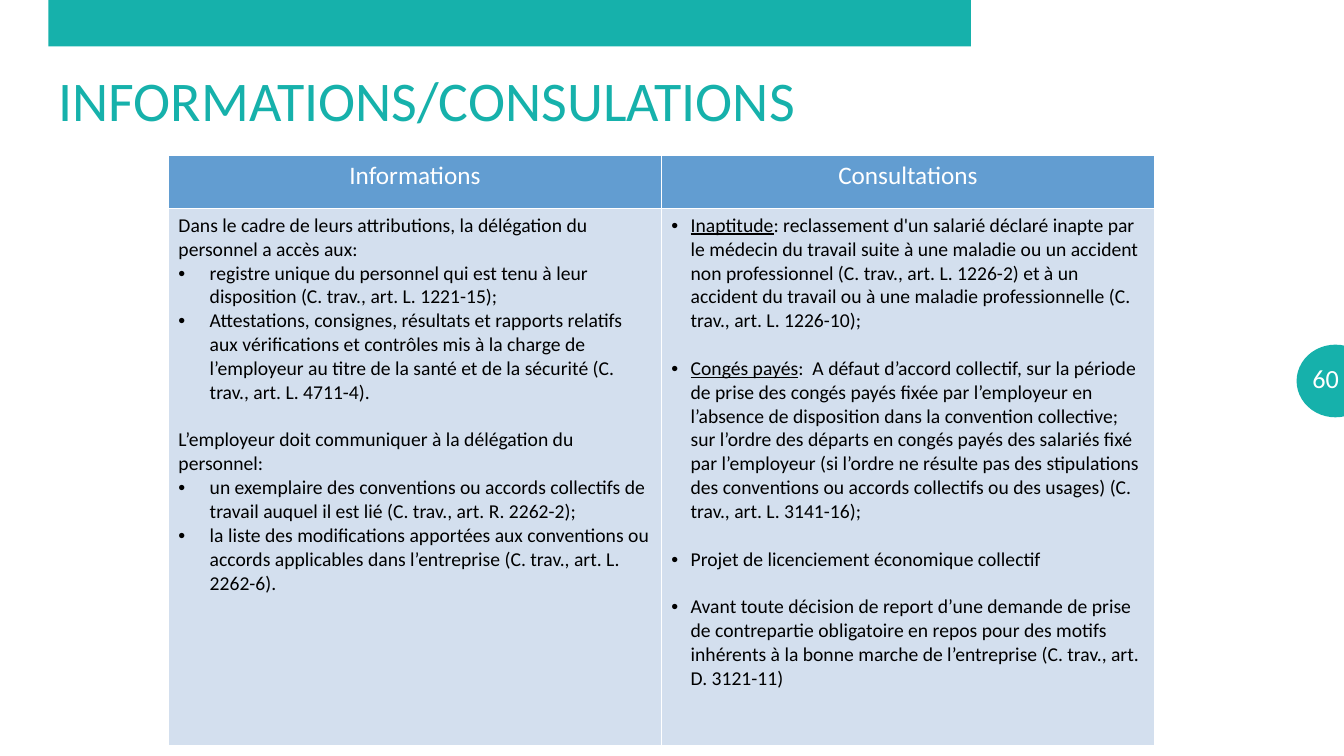
from pptx import Presentation
from pptx.dml.color import RGBColor
from pptx.enum.shapes import MSO_SHAPE
from pptx.enum.text import MSO_ANCHOR, PP_ALIGN
from pptx.oxml.ns import qn
from pptx.util import Inches, Pt
from lxml.etree import SubElement

TEAL = RGBColor(0x16, 0xB1, 0xAB)
WHITE = RGBColor(0xFF, 0xFF, 0xFF)
BLACK = RGBColor(0, 0, 0)
HEADER_BLUE = RGBColor(0x62, 0x9D, 0xD1)
BODY_BLUE = RGBColor(0xD3, 0xDF, 0xEE)
FONT = "Calibri"
LINE_GAP = 17

# Each entry: underlined lead, text, bulleted, space before in points
INFORMATIONS = [
    ("", "Dans le cadre de leurs attributions, la délégation du personnel a accès aux:", False, 0),
    ("", "registre unique du personnel qui est tenu à leur disposition "
         "(C. trav., art. L. 1221-15);", True, 0),
    ("", "Attestations, consignes, résultats et rapports relatifs aux vérifications et "
         "contrôles mis à la charge de l’employeur au titre de la santé et de la sécurité "
         "(C. trav., art. L. 4711-4).", True, 0),
    ("", "L’employeur doit communiquer à la délégation du personnel:", False, LINE_GAP),
    ("", "un exemplaire des conventions ou accords collectifs de travail auquel il est lié "
         "(C. trav., art. R. 2262-2);", True, 0),
    ("", "la liste des modifications apportées aux conventions ou accords applicables dans "
         "l’entreprise (C. trav., art. L. 2262-6).", True, 0),
]
CONSULTATIONS = [
    ("Inaptitude", ": reclassement d'un salarié déclaré inapte par le médecin du travail suite "
     "à une maladie ou un accident non professionnel (C. trav., art. L. 1226-2) et à un accident "
     "du travail ou à une maladie professionnelle (C. trav., art. L. 1226-10);", True, 0),
    ("Congés payés", ":  A défaut d’accord collectif, sur la période de prise des congés payés "
     "fixée par l’employeur en l’absence de disposition dans la convention collective; sur "
     "l’ordre des départs en congés payés des salariés fixé par l’employeur (si l’ordre ne "
     "résulte pas des stipulations des conventions ou accords collectifs ou des usages) "
     "(C. trav., art. L. 3141-16);", True, LINE_GAP),
    ("", "Projet de licenciement économique collectif", True, LINE_GAP),
    ("", "Avant toute décision de report d’une demande de prise de contrepartie obligatoire en "
     "repos pour des motifs inhérents à la bonne marche de l’entreprise "
     "(C. trav., art. D. 3121-11)", True, LINE_GAP),
]
COLUMNS = [("Informations", INFORMATIONS, 0.31), ("Consultations", CONSULTATIONS, 0.19)]


def write(paragraph, text, *, size, color, lead="", align=PP_ALIGN.LEFT, indent=0, before=0):
    """Fill a paragraph; lead is underlined, a non-zero indent adds a bullet."""
    if indent:
        properties = paragraph._p.get_or_add_pPr()
        properties.set("marL", str(Inches(indent)))
        properties.set("indent", str(-Inches(indent)))
        SubElement(properties, qn("a:buFont"), typeface="Arial")
        SubElement(properties, qn("a:buChar"), char="•")
    paragraph.alignment = align
    if before:
        paragraph.space_before = Pt(before)
    for words, underlined in ((lead, True), (text, False)):
        if words:
            run = paragraph.add_run()
            run.text = words
            font = run.font
            font.name, font.size, font.bold = FONT, Pt(size), False
            font.underline = underlined
            font.color.rgb = color


def add_teal_shape(slide, kind, left, top, width, height):
    shape = slide.shapes.add_shape(kind, Inches(left), Inches(top), Inches(width), Inches(height))
    shape.shadow.inherit = False
    shape.fill.solid()
    shape.fill.fore_color.rgb = TEAL
    shape.line.fill.background()
    return shape


def add_page_badge(slide, left, top, number):
    disc = add_teal_shape(slide, MSO_SHAPE.OVAL, left, top, 0.75, 0.7)
    disc.line.color.rgb = TEAL
    disc.line.width = Pt(1.5)
    label = slide.shapes.add_textbox(Inches(left - 0.04), Inches(top + 0.12),
                                     Inches(0.58), Inches(0.4))
    frame = label.text_frame
    frame.word_wrap = True
    frame.vertical_anchor = MSO_ANCHOR.MIDDLE
    frame.margin_left = frame.margin_right = Inches(0.13)
    frame.margin_top = frame.margin_bottom = Inches(0.07)
    write(frame.paragraphs[0], number, size=18.7, color=WHITE, align=PP_ALIGN.RIGHT)


def set_title(slide, left, top, width, height, text):
    title = slide.shapes.title
    title.left, title.top = Inches(left), Inches(top)
    title.width, title.height = Inches(width), Inches(height)
    title.text_frame.vertical_anchor = MSO_ANCHOR.MIDDLE
    write(title.text_frame.paragraphs[0], text, size=40, color=TEAL)


def style_cell(cell, fill):
    properties = cell._tc.get_or_add_tcPr()
    for side in ("a:lnL", "a:lnR", "a:lnT", "a:lnB"):
        border = SubElement(properties, qn(side), w=str(Pt(1)))
        SubElement(SubElement(border, qn("a:solidFill")), qn("a:srgbClr"), val=str(WHITE))
    cell.fill.solid()
    cell.fill.fore_color.rgb = fill


def add_rights_table(slide, left, top, width, row_heights):
    table = slide.shapes.add_table(len(row_heights), len(COLUMNS), Inches(left), Inches(top),
                                   Inches(width), Inches(sum(row_heights))).table
    for row, height in zip(table.rows, row_heights):
        row.height = Inches(height)
    for index, (heading, entries, indent) in enumerate(COLUMNS):
        table.columns[index].width = Inches(width / len(COLUMNS))
        header, body = table.cell(0, index), table.cell(1, index)
        style_cell(header, HEADER_BLUE)
        style_cell(body, BODY_BLUE)
        write(header.text_frame.paragraphs[0], heading, size=18, color=WHITE,
              align=PP_ALIGN.CENTER)
        frame = body.text_frame
        for position, (lead, text, bulleted, before) in enumerate(entries):
            paragraph = frame.add_paragraph() if position else frame.paragraphs[0]
            write(paragraph, text, lead=lead, size=14, color=BLACK,
                  indent=indent if bulleted else 0, before=before)


def main():
    presentation = Presentation()
    presentation.slide_width, presentation.slide_height = Inches(13.33), Inches(7.5)
    slide = presentation.slides.add_slide(presentation.slide_layouts[5])
    add_teal_shape(slide, MSO_SHAPE.RECTANGLE, 0.48, 0, 9.15, 0.46)
    add_page_badge(slide, 12.87, 3.43, "60")
    set_title(slide, 0.48, 0.6, 12.39, 0.77, "INFORMATIONS/CONSULATIONS")
    add_rights_table(slide, 1.67, 1.54, 9.78, (0.53, 5.33))
    presentation.save("out.pptx")


if __name__ == "__main__":
    main()
